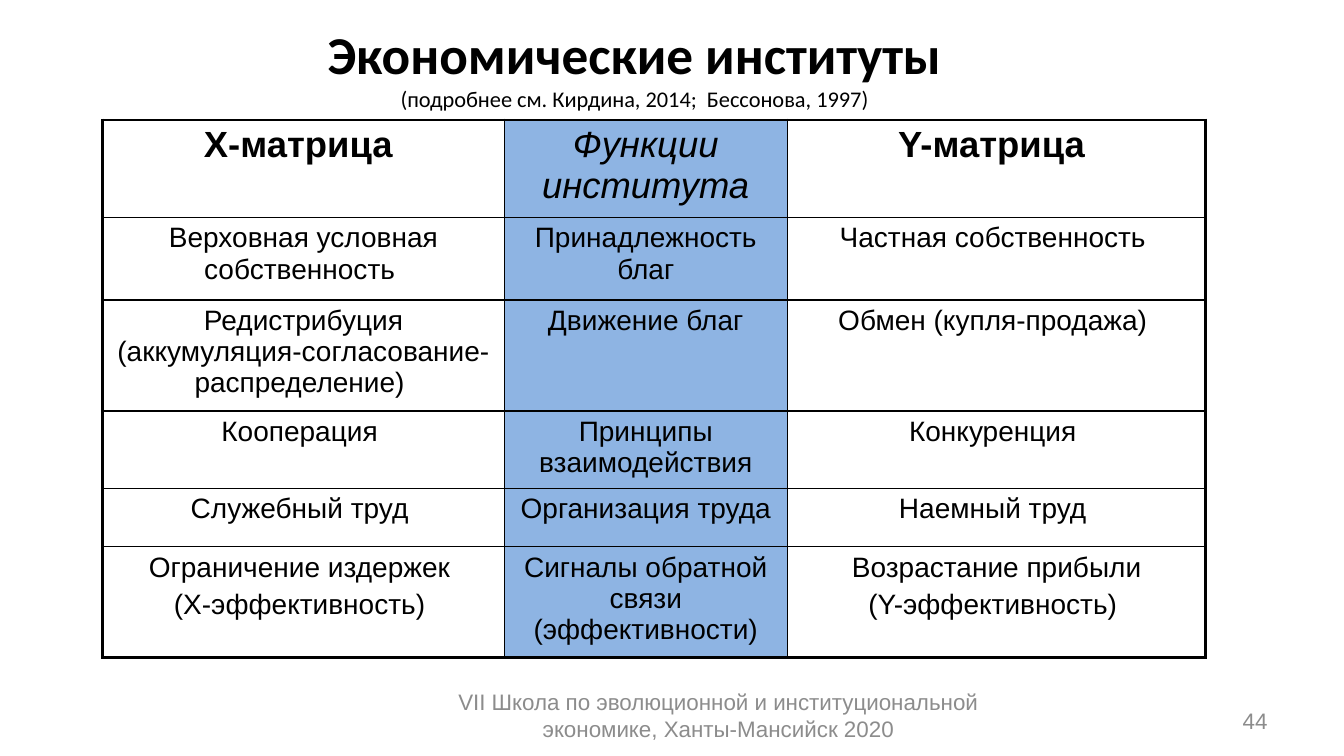
from lxml import etree
from pptx import Presentation
from pptx.dml.color import RGBColor
from pptx.enum.text import MSO_ANCHOR, MSO_AUTO_SIZE, PP_ALIGN
from pptx.oxml.ns import qn
from pptx.util import Inches, Pt

BLACK = RGBColor(0x00, 0x00, 0x00)
GRAY = RGBColor(0x8C, 0x8C, 0x8C)
BLUE = RGBColor(0x8E, 0xB4, 0xE3)
CENTER, RIGHT = PP_ALIGN.CENTER, PP_ALIGN.RIGHT
MIDDLE = MSO_ANCHOR.MIDDLE
NO_AUTOFIT = MSO_AUTO_SIZE.NONE

THIN, THICK = 1, 2.25
FUNCTION_COLUMN = 1
COLUMN_WIDTHS = [3.98, 2.81, 4.15]
ROW_HEIGHTS = [0.9, 0.82, 1.03, 0.72, 0.58, 1.03]
# Each cell is a string; a line feed starts a new paragraph.
INSTITUTIONS = [
    ["Х-матрица ", "Функции института", "Y-матрица "],
    ["Верховная условная собственность ", "Принадлежность благ",
     "Частная собственность "],
    ["Редистрибуция (аккумуляция-согласование-распределение) ",
     "Движение благ", "Обмен (купля-продажа) "],
    ["Кооперация ", "Принципы взаимодействия", "Конкуренция "],
    ["Служебный труд ", "Организация труда", "Наемный труд "],
    ["Ограничение издержек \n(Х-эффективность) ",
     "Сигналы обратной связи (эффективности)",
     "Возрастание прибыли\n(Y-эффективность) "],
]


def add_run(p, text, size, color=BLACK, font="Arial", bold=False, italic=False):
    r = p.add_run()
    r.text = text
    r.font.name = font
    r.font.size = Pt(size)
    r.font.bold = bold
    r.font.italic = italic
    r.font.color.rgb = color


def place(sp, left, top, width, height):
    sp.left, sp.top = Inches(left), Inches(top)
    sp.width, sp.height = Inches(width), Inches(height)


def set_title(slide):
    title = slide.shapes.title
    place(title, 2.17, 0.13, 8.25, 1.06)
    tf = title.text_frame
    tf.auto_size = NO_AUTOFIT
    tf.vertical_anchor = MIDDLE
    p = tf.paragraphs[0]
    p.alignment = CENTER
    add_run(p, "Экономические институты", 38, font="Calibri", bold=True)
    p.add_line_break()
    add_run(p, "(подробнее см. Кирдина, 2014;  Бессонова, 1997)", 16, font="Calibri")


def add_footer_text(slide, text, box, align):
    sp = slide.shapes.add_textbox(*(Inches(v) for v in box))
    tf = sp.text_frame
    tf.word_wrap = True
    tf.vertical_anchor = MIDDLE
    p = tf.paragraphs[0]
    p.alignment = align
    add_run(p, text, 16, GRAY)


def set_borders(cell, widths):
    """Draw black borders, given in points for left, right, top and bottom."""
    tc_pr = cell._tc.get_or_add_tcPr()
    for i, (side, width) in enumerate(zip(("lnL", "lnR", "lnT", "lnB"), widths)):
        ln = etree.Element(qn(f"a:{side}"), w=str(Pt(width)))
        fill = etree.SubElement(ln, qn("a:solidFill"))
        etree.SubElement(fill, qn("a:srgbClr"), val=str(BLACK))
        tc_pr.insert(i, ln)


def fill_cell(cell, text, is_header, is_function):
    if is_function:
        cell.fill.solid()
        cell.fill.fore_color.rgb = BLUE
    else:
        cell.fill.background()
    size = 26 if is_header else 20
    tf = cell.text_frame
    for i, line in enumerate(text.split("\n")):
        p = tf.add_paragraph() if i else tf.paragraphs[0]
        p.alignment = CENTER
        p.space_before = Pt(size * 0.2)
        add_run(p, line, size, bold=is_header and not is_function,
                italic=is_header and is_function)


def add_institutions_table(slide):
    last_row, last_col = len(ROW_HEIGHTS) - 1, len(COLUMN_WIDTHS) - 1
    table = slide.shapes.add_table(
        len(ROW_HEIGHTS), len(COLUMN_WIDTHS), Inches(1.02), Inches(1.19),
        Inches(sum(COLUMN_WIDTHS)), Inches(sum(ROW_HEIGHTS))).table
    table.first_row = table.horz_banding = False
    for column, width in zip(table.columns, COLUMN_WIDTHS):
        column.width = Inches(width)
    for row, height in zip(table.rows, ROW_HEIGHTS):
        row.height = Inches(height)
    for r, texts in enumerate(INSTITUTIONS):
        for c, text in enumerate(texts):
            cell = table.cell(r, c)
            fill_cell(cell, text, r == 0, c == FUNCTION_COLUMN)
            outer = (c == 0, c == last_col, r == 0, r == last_row)
            set_borders(cell, [THICK if edge else THIN for edge in outer])


def main():
    prs = Presentation()
    prs.slide_width, prs.slide_height = Inches(13.33), Inches(7.5)
    slide = prs.slides.add_slide(prs.slide_layouts.get_by_name("Title Only"))
    set_title(slide)
    add_footer_text(
        slide, "VII Школа по эволюционной и институциональной экономике, "
        "Ханты-Мансийск 2020", (4.39, 6.82, 5.47, 0.55), CENTER)
    add_footer_text(slide, "44", (9.56, 6.95, 3.11, 0.4), RIGHT)
    add_institutions_table(slide)
    prs.save("out.pptx")


if __name__ == "__main__":
    main()
